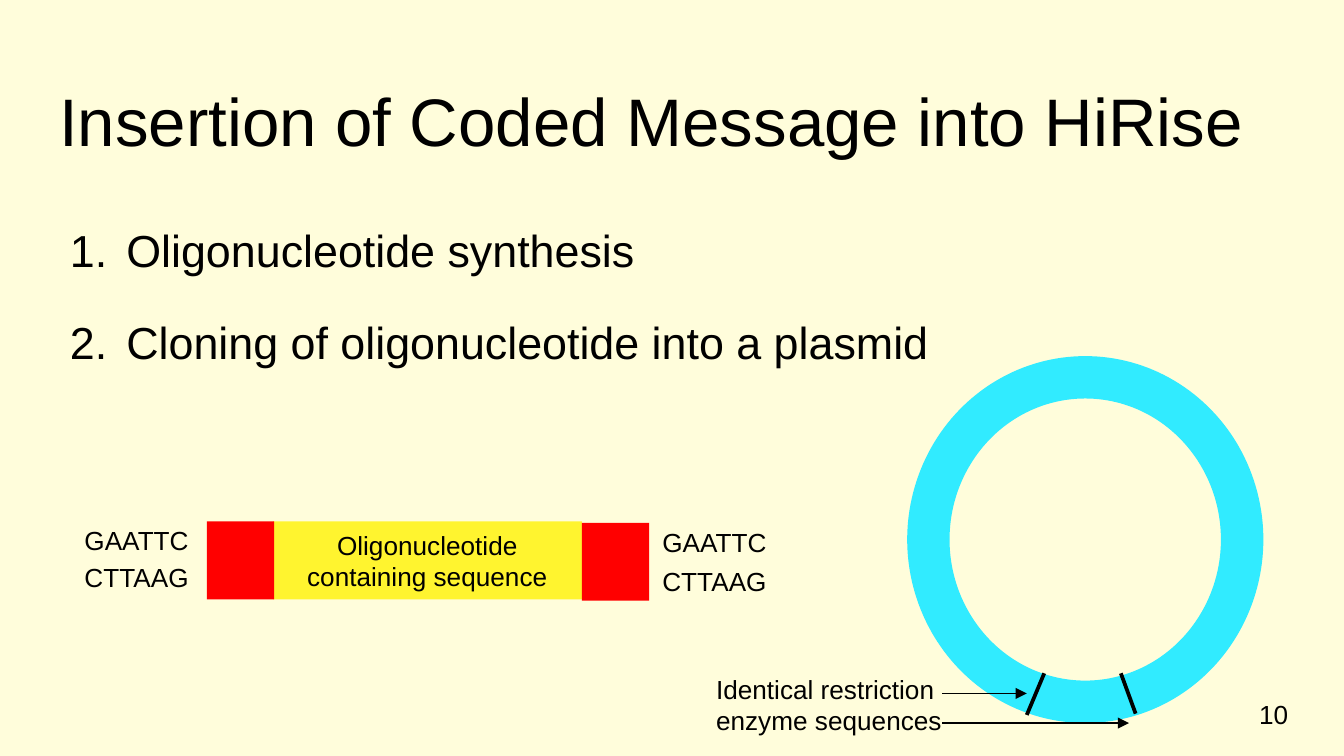
from typing import NamedTuple

from lxml.etree import SubElement
from pptx import Presentation
from pptx.dml.color import RGBColor
from pptx.enum.shapes import MSO_CONNECTOR as Conn, MSO_SHAPE as Shape
from pptx.enum.text import MSO_ANCHOR as Anchor, MSO_AUTO_SIZE as Fit, PP_ALIGN as Align
from pptx.oxml.ns import qn
from pptx.util import Inches, Pt

FONT = "Arial"
COLORS = {
    "back": "FFFDDB",
    "ink": "000000",
    "oligo": "FFF42F",
    "site": "FF0000",
    "ring": "31EBFF",
}


class Box(NamedTuple):
    left: float
    top: float
    width: float
    height: float


class Label(NamedTuple):
    text: str
    box: Box
    align: Align = Align.LEFT


class Block(NamedTuple):
    kind: Shape
    box: Box
    color: str


class Line(NamedTuple):
    start: tuple[float, float]
    end: tuple[float, float]
    weight: float
    arrow: bool = False


STEPS = ["Oligonucleotide synthesis", "Cloning of oligonucleotide into a plasmid"]

OLIGO = [
    Block(Shape.RECTANGLE, Box(2.03, 3.88, 2.3, 0.58), "oligo"),
]
OLIGO_LABEL = Label("Oligonucleotide containing sequence",
                    Box(2.03, 3.89, 2.3, 0.57), Align.CENTER)

SITES = [
    Block(Shape.RECTANGLE, Box(1.54, 3.88, 0.5, 0.58), "site"),
    Block(Shape.RECTANGLE, Box(4.33, 3.89, 0.5, 0.58), "site"),
]
STRANDS = [
    Label("GAATTC", Box(4.83, 3.87, 2.18, 0.34)),
    Label("CTTAAG", Box(4.83, 4.16, 2.18, 0.34)),
    Label("GAATTC", Box(0.53, 3.85, 1.05, 0.34)),
    Label("CTTAAG", Box(0.53, 4.13, 1.01, 0.34)),
]

RING = Block(Shape.DONUT, Box(6.75, 2.65, 2.65, 2.73), "ring")
CUTS = [
    Line((7.77, 5.01), (7.64, 5.32), 2),
    Line((8.34, 5.01), (8.45, 5.31), 2),
]
ENZYME = Label("Identical restriction enzyme sequences", Box(5.23, 4.96, 2.17, 0.57))
ARROWS = [
    Line((7.01, 5.16), (7.64, 5.16), 0.75, True),
    Line((7.01, 5.38), (8.4, 5.38), 0.75, True),
]
PARTS = [*OLIGO, OLIGO_LABEL, *SITES, *STRANDS, RING, *CUTS, ENZYME, *ARROWS]


def rgb(name: str) -> RGBColor:
    return RGBColor.from_string(COLORS[name])


def place(shape, box: Box) -> None:
    shape.left, shape.top, shape.width, shape.height = map(Inches, box)


def pad(frame, gap: float = 0.1) -> None:
    frame.margin_left = frame.margin_right = Inches(gap)
    frame.margin_top = frame.margin_bottom = Inches(gap)


def style(frame, size: float, align: Align = Align.LEFT) -> None:
    for para in frame.paragraphs:
        para.alignment = align
        for run in para.runs:
            run.font.name = FONT
            run.font.size = Pt(size)
            run.font.color.rgb = rgb("ink")


def fill_holder(holder, box: Box, text: str, size: float) -> None:
    place(holder, box)
    frame = holder.text_frame
    frame.text = text
    frame.word_wrap = True
    frame.auto_size = Fit.NONE
    frame.vertical_anchor = Anchor.TOP
    pad(frame)
    style(frame, size)


def number(para) -> None:
    """Turn a paragraph into an automatically numbered step."""
    para.line_spacing = 1.15
    para.space_before = Pt(0)
    para.space_after = Pt(16)
    props = para._p.get_or_add_pPr()
    props.set("marL", str(Inches(0.5)))
    props.set("indent", str(Inches(-0.42)))
    tint = SubElement(props, qn("a:buClr"))
    SubElement(tint, qn("a:srgbClr"), val=COLORS["ink"])
    SubElement(props, qn("a:buFont"), typeface=FONT)
    SubElement(props, qn("a:buAutoNum"), type="arabicPeriod")


def add_block(slide, block: Block) -> None:
    shape = slide.shapes.add_shape(block.kind, *map(Inches, block.box))
    shape.shadow.inherit = False
    shape.fill.solid()
    shape.fill.fore_color.rgb = rgb(block.color)
    shape.line.fill.background()
    if block.kind == Shape.DONUT:
        shape.adjustments[0] = 0.119


def add_label(slide, label: Label):
    frame = slide.shapes.add_textbox(*map(Inches, label.box)).text_frame
    frame.text = label.text
    frame.word_wrap = True
    frame.auto_size = Fit.SHAPE_TO_FIT_TEXT
    style(frame, 14, label.align)
    return frame


def add_line(slide, line: Line) -> None:
    ends = map(Inches, line.start + line.end)
    link = slide.shapes.add_connector(Conn.STRAIGHT, *ends)
    link.line.color.rgb = rgb("ink")
    link.line.width = Pt(line.weight)
    if line.arrow:
        SubElement(link.line._get_or_add_ln(), qn("a:tailEnd"), type="triangle")
    SubElement(link._element.spPr, qn("a:effectLst"))


DRAW = {Block: add_block, Label: add_label, Line: add_line}


def main() -> None:
    deck = Presentation()
    deck.slide_width = Inches(10)
    deck.slide_height = deck.slide_width * 9 // 16
    slide = deck.slides.add_slide(deck.slide_layouts[1])
    slide.background.fill.solid()
    slide.background.fill.fore_color.rgb = rgb("back")

    title, body = slide.placeholders
    fill_holder(title, Box(0.34, 0.49, 9.32, 0.63),
                "Insertion of Coded Message into HiRise", 36)
    fill_holder(body, Box(0.34, 1.5, 9.32, 1.47), "\n".join(STEPS), 24)
    for para in body.text_frame.paragraphs:
        number(para)

    page = add_label(slide, Label("10", Box(9.27, 5.1, 0.6, 0.43)))
    page.auto_size = Fit.NONE
    page.vertical_anchor = Anchor.MIDDLE
    pad(page)

    for part in PARTS:
        DRAW[type(part)](slide, part)

    deck.save("out.pptx")


if __name__ == "__main__":
    main()
